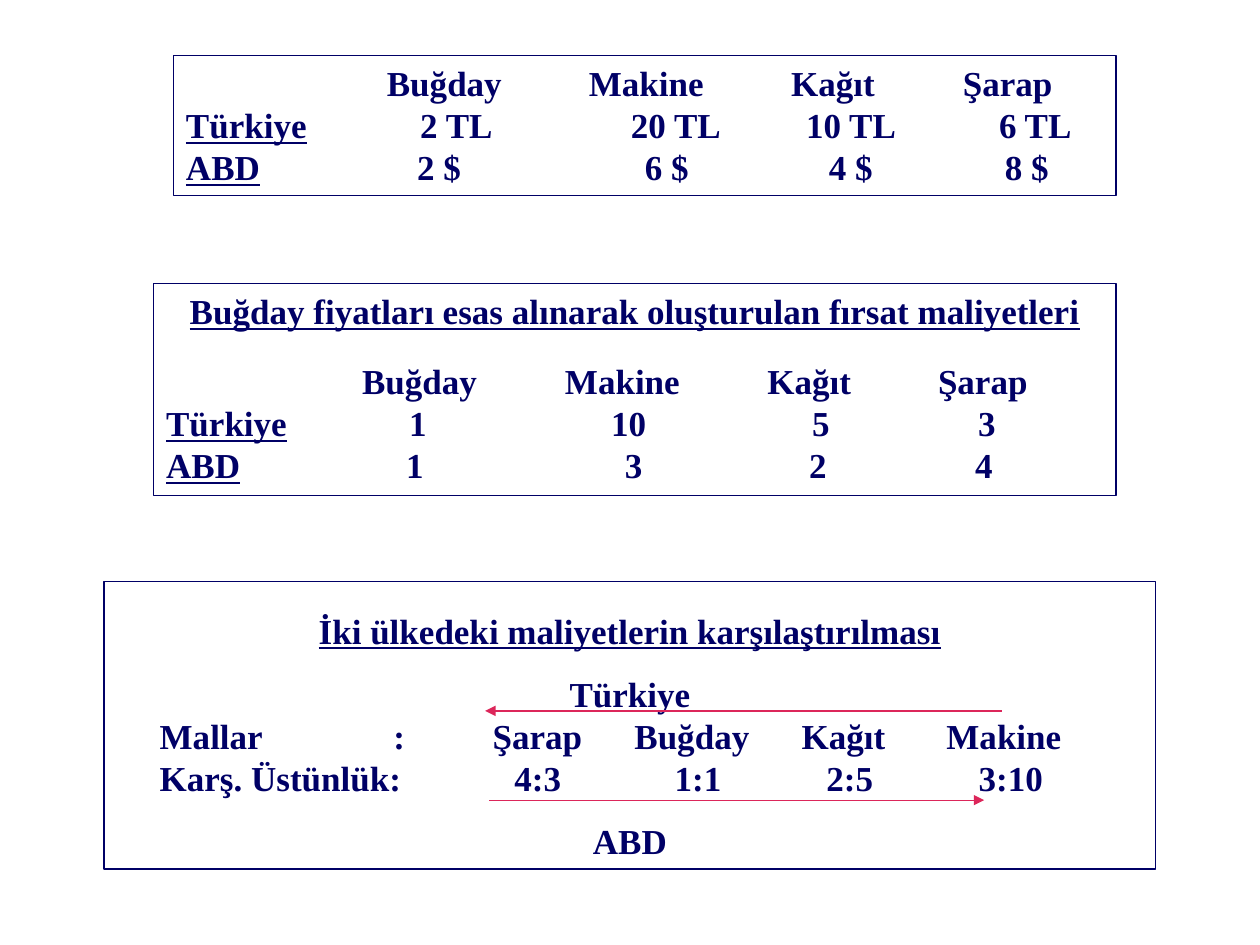
"""Build a slide of price, opportunity cost and comparative advantage boxes."""
from pptx import Presentation
from pptx import util as u
from pptx.dml.color import RGBColor
from pptx.enum import shapes, text
from pptx.oxml.ns import qn
from lxml import etree

HUES = {"ink": "000066", "arrow": "DC265A"}
FONT = {"name": "Times New Roman", "size": u.Pt(20), "bold": True}
FRAME = {"word_wrap": True, "auto_size": text.MSO_AUTO_SIZE.SHAPE_TO_FIT_TEXT}
HEAD = {"alignment": text.PP_ALIGN.CENTER, "space_after": u.Pt(16)}
WIDE = {"alignment": text.PP_ALIGN.CENTER, "line_spacing": 1.5}
GOODS = ["", "Buğday", "Makine", "Kağıt", "Şarap"]


def put(item, vals):
    for key, val in vals.items():
        setattr(item, key, val)


def tint(line, hue):
    line.color.rgb = RGBColor.from_string(HUES[hue])
    line.width = u.Pt(0.75)


deck = Presentation()
put(deck, {"slide_width": u.Cm(25.4), "slide_height": u.Cm(19.05)})
slide = deck.slides.add_slide(deck.slide_layouts[6])

boxes = [
    ((3.5, 1.12, 19, 2.82), [
        (GOODS, [4.05, 8.12, 12.2, 15.66], False, {}),
        (["Türkiye", "2 TL", "20 TL", "10 TL", "6 TL"], [4.72, 8.97, 12.5, 16.39], True, {}),
        (["ABD", "2 $", "6 $", "4 $", "8 $"], [4.66, 9.25, 12.96, 16.51], True, {}),
    ]),
    ((3.1, 5.72, 19.4, 4.27), [
        (["Buğday fiyatları esas alınarak oluşturulan fırsat maliyetleri"], [], True, HEAD),
        (GOODS, [3.95, 8.04, 12.12, 15.56], False, {}),
        (["Türkiye", "1", "10", "5", "3"], [4.9, 8.97, 13.02, 16.37], True, {}),
        (["ABD", "1", "3", "2", "4"], [4.84, 9.25, 12.96, 16.31], True, {}),
    ]),
    ((2.1, 11.73, 21.2, 5.79), [
        (["İki ülkedeki maliyetlerin karşılaştırılması"], [], True, WIDE),
        (["Türkiye"], [], False, WIDE),
        (["", "Mallar", ":", "Şarap", "Buğday", "Kağıt", "Makine"],
         [0.87, 5.58, 7.58, 10.44, 13.81, 16.73], False, {}),
        (["", "Karş. Üstünlük:", "4:3", "1:1", "2:5", "3:10"],
         [0.87, 8.02, 11.25, 14.31, 17.38], False, {}),
        (["ABD"], [], False, WIDE),
    ]),
]

for place, rows in boxes:
    box = slide.shapes.add_textbox(*map(u.Cm, place))
    tint(box.line, "ink")
    frame = box.text_frame
    put(frame, FRAME)
    for num, (cells, stops, under, form) in enumerate(rows):
        para = frame.add_paragraph() if num else frame.paragraphs[0]
        put(para, form)
        if stops:
            tabs = etree.SubElement(para._p.get_or_add_pPr(), qn("a:tabLst"))
            for stop in stops:
                etree.SubElement(tabs, qn("a:tab"), pos=str(u.Cm(stop)), algn="l")
        rest = "".join("\t" + cell for cell in cells[1:])
        for words, mark in ((cells[0], under), (rest, False)):
            if words:
                run = para.add_run()
                run.text = words
                put(run.font, {**FONT, "underline": mark})
                run.font.color.rgb = RGBColor.from_string(HUES["ink"])

for start, end, top in ((20.19, 9.78, 14.33), (9.86, 19.84, 16.13)):
    arrow = slide.shapes.add_connector(
        shapes.MSO_CONNECTOR.STRAIGHT, u.Cm(start), u.Cm(top), u.Cm(end), u.Cm(top))
    tint(arrow.line, "arrow")
    etree.SubElement(arrow.line._get_or_add_ln(), qn("a:tailEnd"), type="triangle")
    etree.SubElement(arrow._element.spPr, qn("a:effectLst"))

deck.save("out.pptx")
